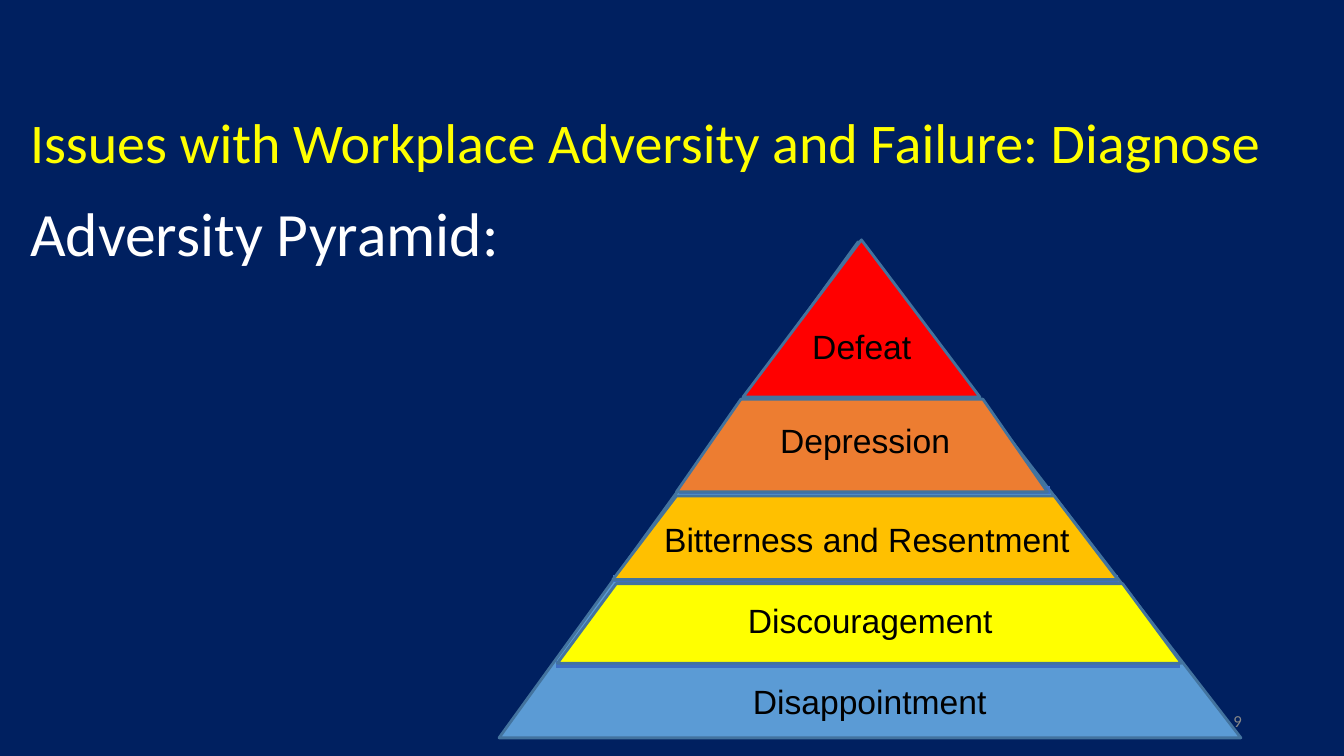
import pptx
import pptx.util
import pptx.dml.color
import pptx.enum.shapes
import pptx.enum.text
import pptx.oxml.ns
from lxml import etree

SLIDE_WIDTH = pptx.util.Inches(13.33)
SLIDE_HEIGHT = pptx.util.Inches(7.5)
SHAPES = pptx.enum.shapes.MSO_SHAPE
ALIGN = pptx.enum.text.PP_ALIGN
ANCHOR = pptx.enum.text.MSO_ANCHOR
LABEL_HEIGHT = 6.67

COLOURS = {
    "background": "002060",
    "title": "FFFF00",
    "subtitle": "FFFFFF",
    "number": "888888",
    "label": "000000",
    "outline": "43739E",
    "divider": "3F6FC3",
    "Disappointment": "5B9BD5",
    "Discouragement": "FFFF00",
    "Bitterness and Resentment": "FFC000",
    "Depression": "ED7D31",
    "Defeat": "FF0000",
}

# All places are percentages of the slide's width and height.
# Stage: preset, adjustment, (left, top, width, height), label (left, top, width)
STAGES = {
    "Disappointment": (SHAPES.ISOSCELES_TRIANGLE, 0.484,
                       (37.13, 32, 55.2, 65.6), (55.28, 89.47, 20.48)),
    "Defeat": (SHAPES.ISOSCELES_TRIANGLE, 0.5,
               (55.28, 31.73, 17.63, 20.8), (59.7, 42.4, 26.7)),
    "Depression": (SHAPES.TRAPEZOID, 0.695,
                   (50.33, 52.8, 27.6, 12.27), (57.3, 54.93, 20.4)),
    "Bitterness and Resentment": (SHAPES.TRAPEZOID, 0.761,
                                  (45.6, 65.6, 37.58, 11.07), (48.68, 68, 34.88)),
    "Discouragement": (SHAPES.TRAPEZOID, 0.739,
                       (41.48, 77.2, 46.43, 10.53), (54.9, 78.67, 20.7)),
}

# Divider: left, right, height on the slide
DIVIDERS = [
    (50.55, 78.15, 64.8),
    (45.6, 83.18, 76.53),
    (41.4, 87.83, 87.87),
    (55.28, 72.9, 53.2),
]


def across(share):
    return round(SLIDE_WIDTH * share / 100)


def down(share):
    return round(SLIDE_HEIGHT * share / 100)


def place(left, top, width, height):
    return across(left), down(top), across(width), down(height)


def colour(name):
    return pptx.dml.color.RGBColor.from_string(COLOURS[name])


def add_frame(slide, box, anchor=ANCHOR.TOP):
    """Add a wrapping text box and return its text frame."""
    frame = slide.shapes.add_textbox(*place(*box)).text_frame
    frame.word_wrap = True
    frame.vertical_anchor = anchor
    return frame


def write(paragraph, text, *, size, ink, font="Calibri", align=ALIGN.LEFT, after=0):
    paragraph.alignment = align
    paragraph.space_after = pptx.util.Pt(after)
    run = paragraph.add_run()
    run.text = text
    run.font.name = font
    run.font.size = pptx.util.Pt(size)
    run.font.color.rgb = colour(ink)


def add_stage(slide, stage):
    """Draw one layer of the pyramid with its label."""
    preset, adjustment, box, label_place = STAGES[stage]
    layer = slide.shapes.add_shape(preset, *place(*box))
    layer.adjustments[0] = adjustment
    layer.shadow.inherit = False
    layer.fill.solid()
    layer.fill.fore_color.rgb = colour(stage)
    layer.line.color.rgb = colour("outline")
    layer.line.width = pptx.util.Pt(2)
    label = add_frame(slide, (*label_place, LABEL_HEIGHT))
    write(label.paragraphs[0], stage, size=24, ink="label", font="Arial")


def add_divider(slide, left, right, level):
    divider = slide.shapes.add_connector(
        pptx.enum.shapes.MSO_CONNECTOR.STRAIGHT,
        across(left), down(level), across(right), down(level))
    divider.line.color.rgb = colour("divider")
    divider.line.width = pptx.util.Pt(5.25)
    properties = divider._element.spPr
    etree.SubElement(properties, pptx.oxml.ns.qn("a:effectLst"))


def add_heading(slide):
    heading = add_frame(slide, (1.5, 13.6, 98.5, 40.8))
    write(heading.paragraphs[0],
          "Issues with Workplace Adversity and Failure: Diagnose",
          size=40, ink="title", after=14.6)
    write(heading.add_paragraph(), "Adversity Pyramid:", size=44, ink="subtitle")


def add_page_number(slide):
    number = add_frame(slide, (70.65, 92.67, 22.5, 5.33), ANCHOR.MIDDLE)
    write(number.paragraphs[0], "9", size=12, ink="number", align=ALIGN.RIGHT)


def main():
    deck = pptx.Presentation()
    deck.slide_width = SLIDE_WIDTH
    deck.slide_height = SLIDE_HEIGHT
    slide = deck.slides.add_slide(deck.slide_layouts[6])
    slide.background.fill.solid()
    slide.background.fill.fore_color.rgb = colour("background")

    add_heading(slide)
    add_page_number(slide)
    base, *upper_stages = STAGES
    add_stage(slide, base)
    for divider in DIVIDERS:
        add_divider(slide, *divider)
    for stage in upper_stages:
        add_stage(slide, stage)
    deck.save("out.pptx")


if __name__ == "__main__":
    main()
